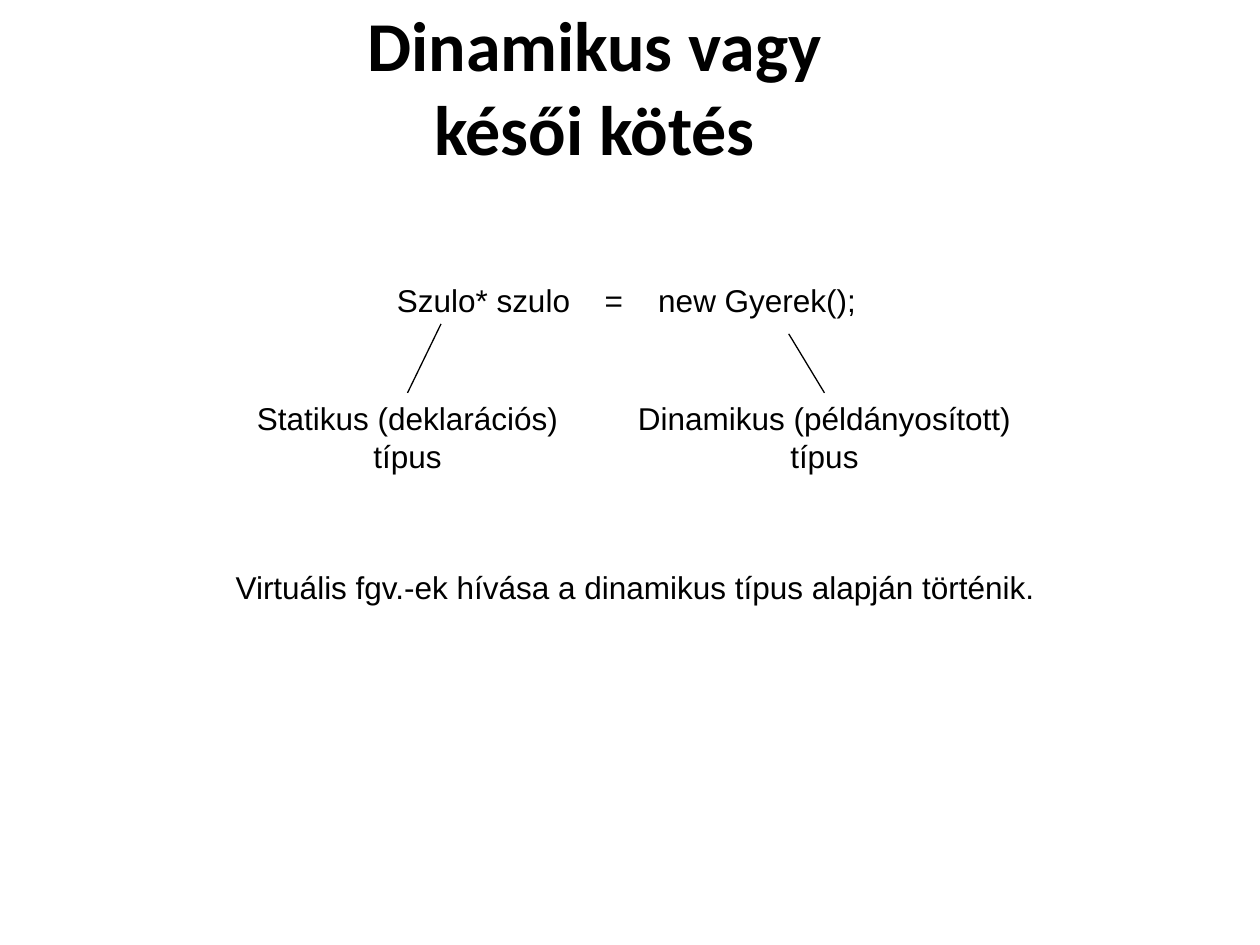
import pptx
import pptx.dml.color
import pptx.enum.shapes
import pptx.enum.text
import pptx.oxml.ns
import pptx.util
from lxml import etree

Cm = pptx.util.Cm
Align = pptx.enum.text.PP_ALIGN
Anchor = pptx.enum.text.MSO_ANCHOR
BLACK = "000000"

TITLE = ("Dinamikus vagy késői kötés", (5.89, -0.08, 12.19, 3.61))
CODE = ("Szulo* szulo\t=\tnew Gyerek();", (7.75, 5.54, 9.86, 1.8))
CODE_TABS = (4.19, 5.27)
TYPE_LABELS = [
    ("Statikus (deklarációs)\vtípus", (4.9, 7.92, 6.63, 1.8), (8.89, 6.53)),
    ("Dinamikus (példányosított)\vtípus", (12.57, 7.92, 8.1, 1.8), (15.9, 6.73)),
]
RULE = ("Virtuális fgv.-ek hívása a dinamikus típus alapján történik.",
        (4.5, 11.33, 16.76, 1.02))


def color(value):
    return pptx.dml.color.RGBColor.from_string(value)


def write_text(shape, text, box, size=18, name="Arial", bold=False,
               align=Align.LEFT, anchor=Anchor.TOP, tabs=()):
    shape.left, shape.top, shape.width, shape.height = map(Cm, box)
    frame = shape.text_frame
    frame.word_wrap = True
    frame.auto_size = pptx.enum.text.MSO_AUTO_SIZE.NONE
    frame.vertical_anchor = anchor
    frame.text = text
    paragraph = frame.paragraphs[0]
    paragraph.alignment = align
    if tabs:
        properties = paragraph._p.get_or_add_pPr()
        tab_list = etree.SubElement(properties, pptx.oxml.ns.qn("a:tabLst"))
        for position in tabs:
            etree.SubElement(tab_list, pptx.oxml.ns.qn("a:tab"),
                             pos=str(Cm(position)), algn="l")
    for run in paragraph.runs:
        run.font.size = pptx.util.Pt(size)
        run.font.name = name
        run.font.bold = bold
        run.font.color.rgb = color(BLACK)


def add_text(slide, text, box, **text_format):
    shape = slide.shapes.add_textbox(*map(Cm, box))
    write_text(shape, text, box, **text_format)


def add_line(slide, start, end):
    connector = slide.shapes.add_connector(
        pptx.enum.shapes.MSO_CONNECTOR.STRAIGHT, *map(Cm, start + end))
    connector.line.color.rgb = color(BLACK)
    connector.line.width = pptx.util.Pt(0.75)
    etree.SubElement(connector._element.spPr, pptx.oxml.ns.qn("a:effectLst"))


def main():
    presentation = pptx.Presentation()
    presentation.slide_width, presentation.slide_height = Cm(25.4), Cm(19.05)
    slide = presentation.slides.add_slide(presentation.slide_layouts[5])

    write_text(slide.shapes.title, *TITLE, size=40, name="Calibri", bold=True,
               align=Align.CENTER, anchor=Anchor.MIDDLE)
    add_text(slide, *CODE, tabs=CODE_TABS)
    for text, box, code_point in TYPE_LABELS:
        left, top, width, height = box
        add_text(slide, text, box, align=Align.CENTER)
        add_line(slide, (left + width / 2, top), code_point)
    add_text(slide, *RULE)

    presentation.save("out.pptx")


if __name__ == "__main__":
    main()
